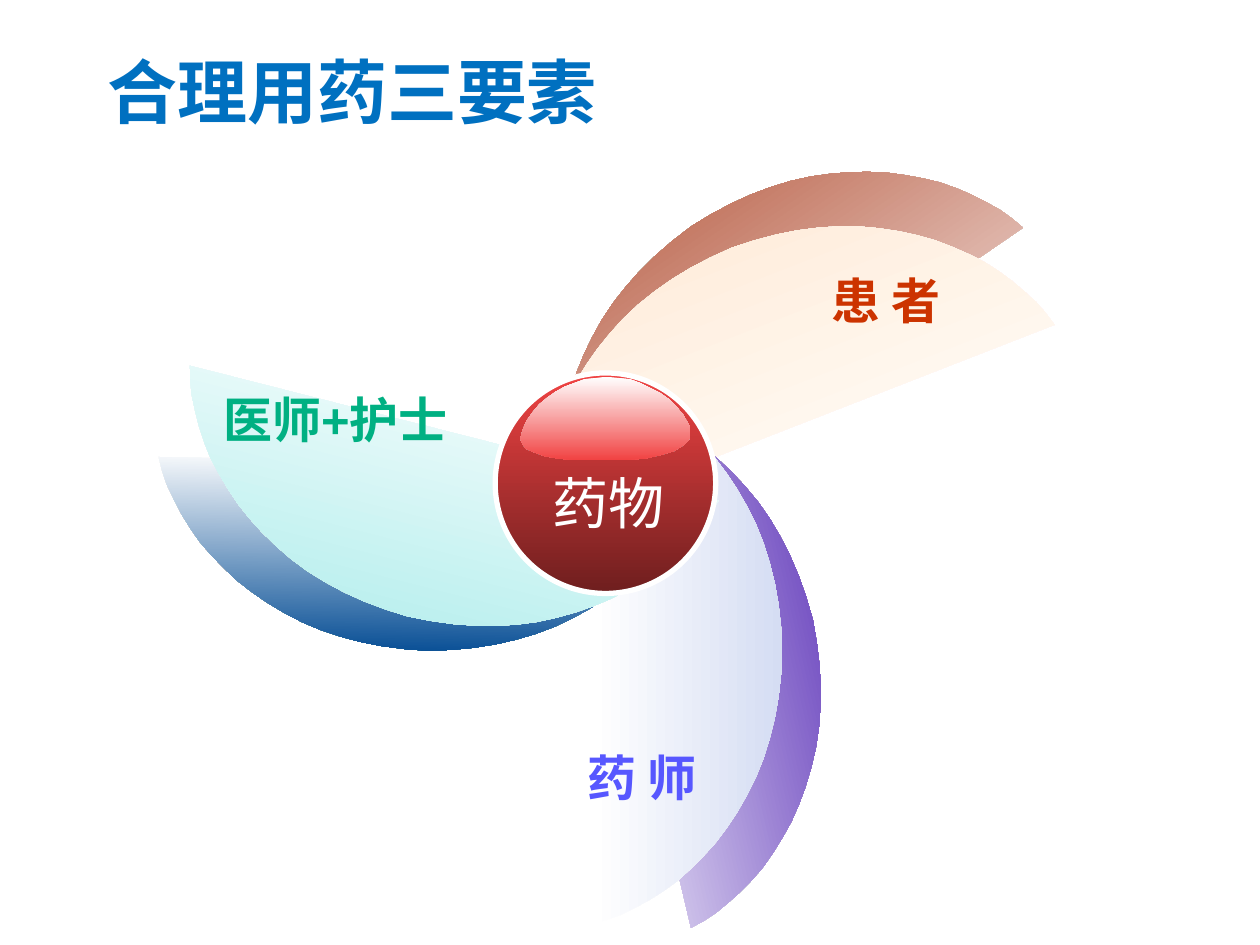
from dataclasses import dataclass

from pptx import Presentation
from pptx.dml.color import RGBColor as RGB
from pptx.enum.shapes import MSO_SHAPE as Preset
from pptx.enum.text import MSO_ANCHOR as Anchor, PP_ALIGN as Align
from pptx.util import Inches, Pt

UNIT = Inches(0.01)


@dataclass(frozen=True)
class Theme:
    title: str = "0070C0"
    patient: str = "CC3300"
    pharmacist: str = "5757FF"
    clinician: str = "00B082"
    white: str = "FFFFFF"
    patient_back: str = "A43010"
    patient_front: str = "FFE6CD"
    pharmacist_back: str = "4516AE"
    pharmacist_front: str = "D5DDF3"
    clinician_back: str = "004992"
    clinician_front: str = "A2EAE8"
    ball_light: str = "F14343"
    ball_dark: str = "6E1E1E"
    title_font: str = "Times New Roman"
    body_font: str = "Arial"
    title_size: int = 40
    hub_size: int = 32
    label_size: int = 28


HALF_BLADE = [
    (0, 0), (11, 3), (22, 7), (34, 13), (45, 19), (56, 26), (67, 34),
    (77, 43), (87, 53), (97, 64), (106, 76), (114, 88), (122, 102),
    (129, 116), (135, 131), (140, 147), (144, 163), (147, 180), (149, 198),
]
BLADE = HALF_BLADE + [(150, 217)] + [(x, 433 - y) for x, y in reversed(HALF_BLADE)]
GLOSS = [
    (133, 37), (135, 41), (135, 48), (133, 51), (130, 54), (122, 59),
    (112, 62), (99, 65), (84, 66), (42, 66), (30, 65), (19, 63), (11, 60),
    (4, 57), (1, 52), (0, 49), (2, 42), (5, 35), (10, 28), (15, 22), (21, 17),
    (28, 12), (35, 8), (43, 5), (51, 2), (60, 1), (68, 0), (78, 1), (87, 2),
    (95, 5), (103, 9), (111, 13), (118, 18), (124, 24), (129, 30),
]


class SlideArtist:
    """Draws styled elements on the current slide."""

    def __init__(self, slide, theme):
        self.slide = slide
        self.theme = theme

    def paint(self, shape, start, end, angle=0):
        shape.shadow.inherit = False
        shape.fill.gradient()
        shape.fill.gradient_angle = angle
        for stop, color, position in zip(shape.fill.gradient_stops, (start, end), (0, 1)):
            stop.color.rgb = RGB.from_string(color)
            stop.position = position
        shape.line.fill.background()

    def outline(self, shapes, points, left, top):
        builder = shapes.build_freeform(*points[0], scale=UNIT)
        builder.add_line_segments(points[1:], close=True)
        return builder.convert_to_shape(Inches(left), Inches(top))

    def blade(self, left, top, rotation, color):
        blade = self.outline(self.slide.shapes, BLADE, left, top)
        blade.rotation = rotation
        self.paint(blade, self.theme.white, color)

    def ball(self, left, top, size):
        theme = self.theme
        shapes = self.slide.shapes.add_group_shape().shapes
        ball = shapes.add_shape(
            Preset.OVAL, Inches(left), Inches(top), Inches(size), Inches(size))
        self.paint(ball, theme.ball_light, theme.ball_dark, 270)
        ball.line.color.rgb = RGB.from_string(theme.white)
        ball.line.width = Pt(3)
        gloss = self.outline(shapes, GLOSS, left + 0.2, top + 0.03)
        self.paint(gloss, theme.white, theme.ball_light, 270)

    def label(self, text, box, color, align=Align.LEFT, wrap=False,
              anchor=Anchor.TOP, **font_format):
        frame = self.slide.shapes.add_textbox(*map(Inches, box)).text_frame
        frame.word_wrap = wrap
        frame.vertical_anchor = anchor
        paragraph = frame.paragraphs[0]
        paragraph.alignment = align
        run = paragraph.add_run()
        run.text = text
        style = {"name": self.theme.body_font, "size": Pt(self.theme.label_size),
                 "bold": True, **font_format}
        for attribute, value in style.items():
            setattr(run.font, attribute, value)
        run.font.color.rgb = RGB.from_string(color)


def main():
    deck = Presentation()
    deck.slide_width, deck.slide_height = Inches(10), Inches(7.5)
    theme = Theme()
    artist = SlideArtist(deck.slides.add_slide(deck.slide_layouts[6]), theme)

    for blade in (
        (5.16, 0.25, 235.5, theme.patient_back),
        (5.33, 0.5, 248.7, theme.patient_front),
        (4.97, 2.92, 346.8, theme.pharmacist_back),
        (2.66, 2.25, 91, theme.clinician_back),
        (4.71, 3, 0, theme.pharmacist_front),
        (2.67, 2, 104.3, theme.clinician_front),
    ):
        artist.blade(*blade)
    artist.ball(3.93, 2.96, 1.75)

    artist.label("合理用药三要素", (0, 0.28, 5.59, 0.87), theme.title, Align.CENTER,
                 True, Anchor.MIDDLE, name=theme.title_font, size=Pt(theme.title_size))
    artist.label("医师+护士", (1.65, 3.04, 2, 0.57), theme.clinician, Align.RIGHT, True)
    artist.label("患 者", (6.5, 2.1, 1.89, 0.57), theme.patient, wrap=True)
    artist.label("药 师", (4.53, 5.88, 1.1, 0.57), theme.pharmacist, Align.RIGHT)
    artist.label("药物", (4.29, 3.67, 1.09, 0.63), theme.white,
                 size=Pt(theme.hub_size), bold=False)
    deck.save("out.pptx")


if __name__ == "__main__":
    main()
